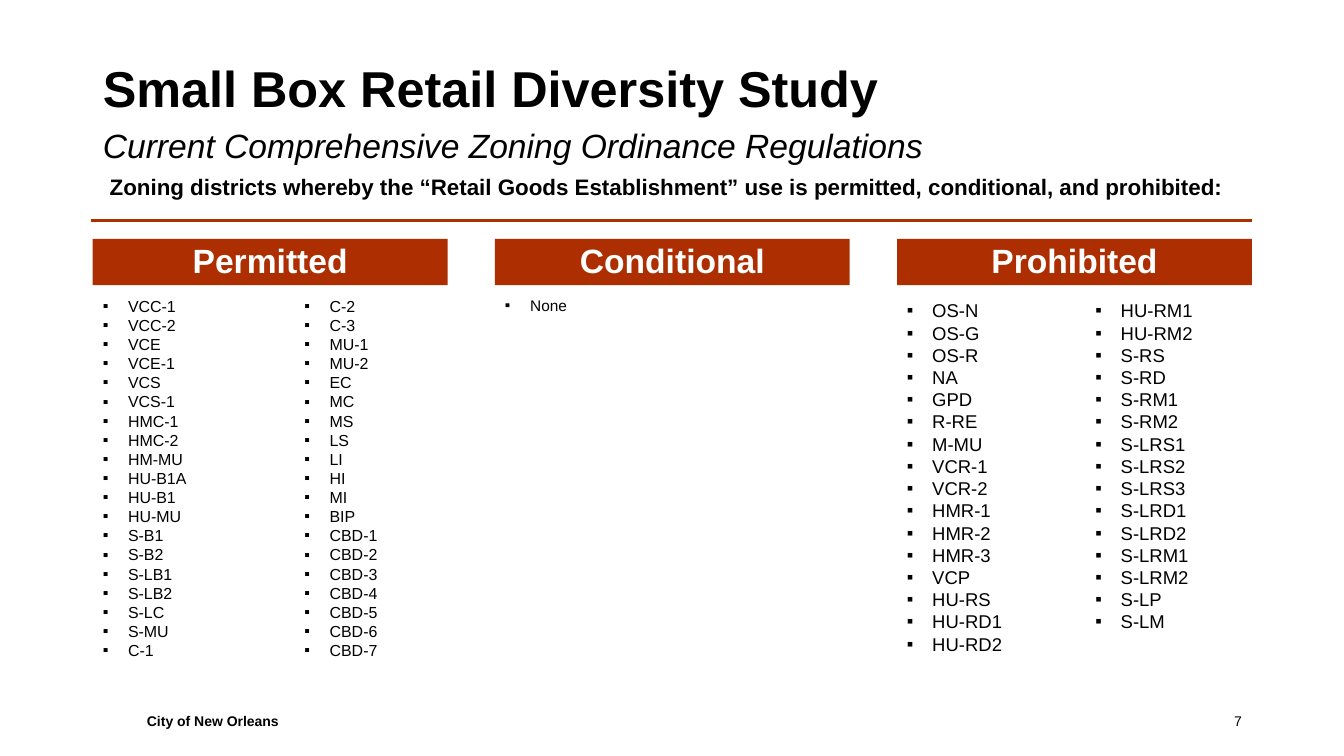
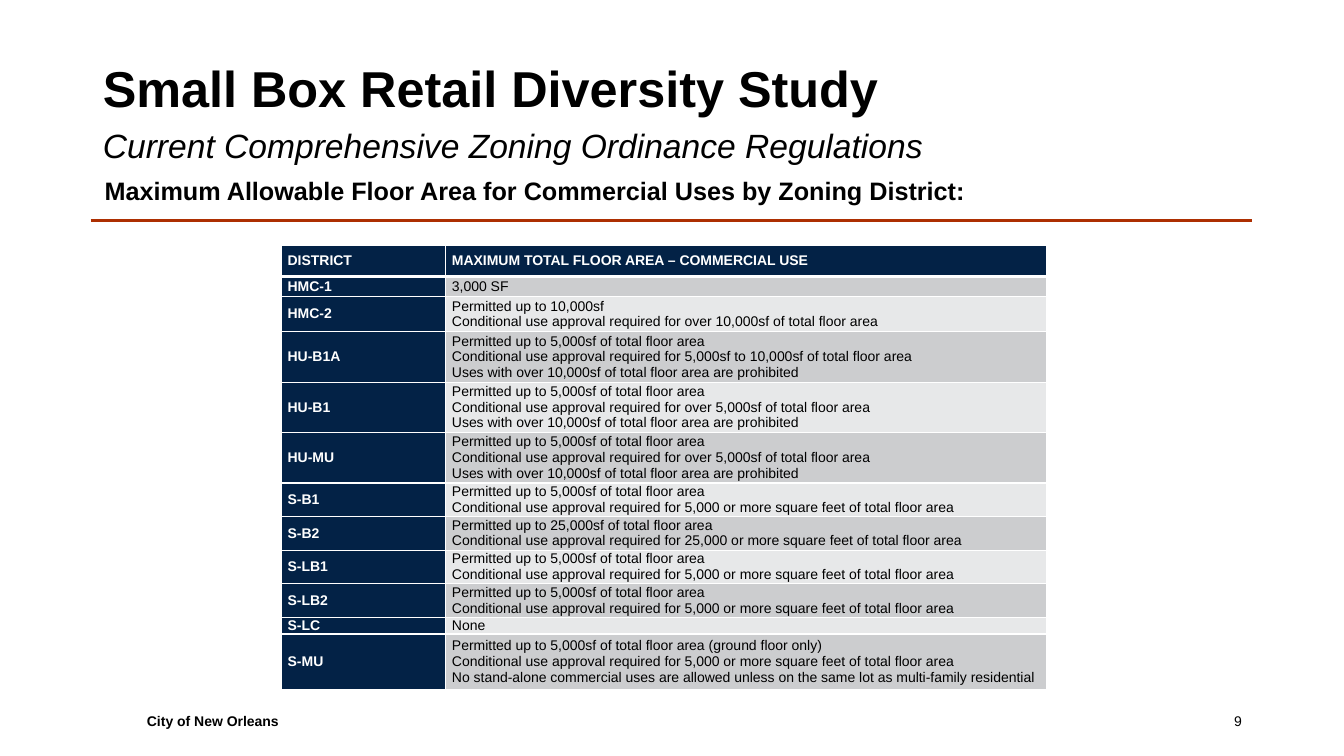
from lxml import etree
from pptx import Presentation
from pptx import util as u
from pptx.dml.color import RGBColor
from pptx.enum import shapes, text
from pptx.oxml.ns import qn

COLORS = {"rust": "AD2F01", "navy": "032246", "black": "000000", "white": "FFFFFF",
          "dark band": "CCCDCF", "light band": "E7E8E9"}
FONT = "Arial"
LEFT, WIDTH = 66.24, 828
COLUMN_WIDTH, COLUMN_STEP = 253.44, 287.28
INDENT = 18


def place(shape, left, top, width, height):
    shape.left, shape.top = u.Pt(left), u.Pt(top)
    shape.width, shape.height = u.Pt(width), u.Pt(height)
    return shape


def write(frame, lines, size, color="black", bold=False, italic=False, align="LEFT",
          anchor="TOP", spacing=1.0, bullet=None):
    frame.word_wrap = True
    frame.auto_size = text.MSO_AUTO_SIZE.NONE
    frame.vertical_anchor = text.MSO_ANCHOR[anchor]
    for index, line in enumerate(lines):
        paragraph = frame.add_paragraph() if index else frame.paragraphs[0]
        paragraph.alignment = text.PP_ALIGN[align]
        paragraph.line_spacing = spacing
        paragraph.space_before = paragraph.space_after = u.Pt(0)
        properties = paragraph._p.get_or_add_pPr()
        indent = u.Pt(INDENT) if bullet else 0
        properties.set("marL", str(indent))
        properties.set("indent", str(-indent))
        if bullet:
            etree.SubElement(properties, qn("a:buFont"), typeface=FONT)
            etree.SubElement(properties, qn("a:buChar"), char=bullet)
        else:
            etree.SubElement(properties, qn("a:buNone"))
        run = paragraph.add_run()
        run.text = line
        run.font.name, run.font.size = FONT, u.Pt(size)
        run.font.bold, run.font.italic = bold, italic
        run.font.color.rgb = RGBColor.from_string(COLORS[color])


presentation = Presentation()
presentation.slide_width, presentation.slide_height = u.Pt(960), u.Pt(540)
comparison, title_content = presentation.slide_layouts[4], presentation.slide_layouts[1]

# Shared frame: title, subtitle, caption, rule and footer
pages = [
    (comparison, "7", "Zoning districts whereby the “Retail Goods Establishment” use is "
     "permitted, conditional, and prohibited:", 16, 71.28, 120.24),
    (title_content, "9", "Maximum Allowable Floor Area for Commercial Uses by Zoning District:",
     18, 67.68, 121.68),
]
for layout, number, caption, caption_size, caption_left, caption_top in pages:
    slide = presentation.slides.add_slide(layout)
    title = place(slide.shapes.title, LEFT, 28.8, WIDTH, 67.68)
    write(title.text_frame, ["Small Box Retail Diversity Study"], 36, bold=True, anchor="MIDDLE")
    subtitle = place(slide.placeholders[1], LEFT, 85.68, WIDTH, 64.8)
    write(subtitle.text_frame, ["Current Comprehensive Zoning Ordinance Regulations"], 24,
          italic=True)

    rule = slide.shapes.add_connector(shapes.MSO_CONNECTOR.STRAIGHT, u.Pt(64.8), u.Pt(157.5),
                                      u.Pt(894.24), u.Pt(157.5))
    rule.line.color.rgb = RGBColor.from_string(COLORS["rust"])
    rule.line.width = u.Pt(2.75)
    etree.SubElement(rule._element.spPr, qn("a:effectLst"))

    labels = [
        (caption, caption_size, True, "LEFT", "TOP", (caption_left, caption_top, 839.52, 28)),
        ("City of New Orleans", 10, True, "LEFT", "MIDDLE", (97.92, 500.4, 544.32, 28.8)),
        (number, 10, False, "RIGHT", "MIDDLE", (678.24, 500.4, 216, 28.8)),
    ]
    for label, size, bold, align, anchor, box in labels:
        text_box = slide.shapes.add_textbox(*map(u.Pt, box))
        write(text_box.text_frame, [label], size, bold=bold, align=align, anchor=anchor)

districts_slide, floor_area_slide = presentation.slides

# Zoning districts: column headings
for index, heading in enumerate(["Permitted", "Conditional", "Prohibited"]):
    band = districts_slide.shapes.add_shape(
        shapes.MSO_SHAPE.RECTANGLE, u.Pt(LEFT + index * COLUMN_STEP), u.Pt(170.64),
        u.Pt(COLUMN_WIDTH), u.Pt(33.12))
    band.shadow.inherit = False
    band.fill.solid()
    band.fill.fore_color.rgb = RGBColor.from_string(COLORS["rust"])
    band.line.fill.background()
    write(band.text_frame, [heading], 24, "white", bold=True, align="CENTER", anchor="BOTTOM",
          spacing=0.9)

# Zoning districts: placeholder number (or None for a text box), left, top, width, size, pitch
district_lists = [
    (2, LEFT, 208.08, 135.36, 11.4, 13.65,
     "VCC-1 VCC-2 VCE VCE-1 VCS VCS-1 HMC-1 HMC-2 HM-MU HU-B1A HU-B1 HU-MU "
     "S-B1 S-B2 S-LB1 S-LB2 S-LC S-MU C-1"),
    (3, 210.24, 208.08, 126, 11.4, 13.65,
     "C-2 C-3 MU-1 MU-2 EC MC MS LS LI HI MI BIP "
     "CBD-1 CBD-2 CBD-3 CBD-4 CBD-5 CBD-6 CBD-7"),
    (4, LEFT + COLUMN_STEP, 208.08, COLUMN_WIDTH, 11, 13.2, "None"),
    (None, LEFT + 2 * COLUMN_STEP, 210.24, 125.28, 13.2, 15.86,
     "OS-N OS-G OS-R NA GPD R-RE M-MU VCR-1 VCR-2 HMR-1 HMR-2 HMR-3 VCP HU-RS HU-RD1 HU-RD2"),
    (None, 775.44, 210.24, 125.28, 13.2, 15.86,
     "HU-RM1 HU-RM2 S-RS S-RD S-RM1 S-RM2 S-LRS1 S-LRS2 S-LRS3 S-LRD1 S-LRD2 "
     "S-LRM1 S-LRM2 S-LP S-LM"),
]
for number, left, top, width, size, pitch, districts in district_lists:
    if number:
        district_list = districts_slide.placeholders[number]
    else:
        district_list = districts_slide.shapes.add_textbox(0, 0, 0, 0)
    place(district_list, left, top, width, 278)
    write(district_list.text_frame, districts.split(), size, spacing=u.Pt(pitch), bullet="▪")

# Floor area table: district, row height, rules
UP_TO_5000 = "Permitted up to 5,000sf of total floor area"
OVER_5000 = "Conditional use approval required for over 5,000sf of total floor area"
OR_MORE = "Conditional use approval required for 5,000 or more square feet of total floor area"
PROHIBITED = "Uses with over 10,000sf of total floor area are prohibited"
floor_areas = [
    ("DISTRICT", 22.4, ["MAXIMUM TOTAL FLOOR AREA – COMMERCIAL USE"]),
    ("HMC-1", 14.4, ["3,000 SF"]),
    ("HMC-2", 25.2, ["Permitted up to 10,000sf",
                     "Conditional use approval required for over 10,000sf of total floor area"]),
    ("HU-B1A", 36, [UP_TO_5000, "Conditional use approval required for 5,000sf to 10,000sf "
                    "of total floor area", PROHIBITED]),
    ("HU-B1", 36, [UP_TO_5000, OVER_5000, PROHIBITED]),
    ("HU-MU", 36, [UP_TO_5000, OVER_5000, PROHIBITED]),
    ("S-B1", 24, [UP_TO_5000, OR_MORE]),
    ("S-B2", 24, [UP_TO_5000.replace("5,000", "25,000"), OR_MORE.replace("5,000", "25,000")]),
    ("S-LB1", 24, [UP_TO_5000, OR_MORE]),
    ("S-LB2", 24, [UP_TO_5000, OR_MORE]),
    ("S-LC", 12, ["None"]),
    ("S-MU", 39.6, [UP_TO_5000 + " (ground floor only)", OR_MORE,
                    "No stand-alone commercial uses are allowed unless on the same lot as "
                    "multi-family residential"]),
]
table = floor_area_slide.shapes.add_table(
    len(floor_areas), 2, u.Pt(201), u.Pt(175), u.Pt(546.48),
    u.Pt(sum(height for _, height, _ in floor_areas))).table
table.horz_banding = False
table.columns[0].width, table.columns[1].width = u.Pt(117.36), u.Pt(429.12)

for row, (district, height, rules) in enumerate(floor_areas):
    table.rows[row].height = u.Pt(height)
    for column, lines in enumerate([[district], rules]):
        cell = table.cell(row, column)
        heading = row == 0 or column == 0
        fill = "navy" if heading else "dark band" if row % 2 else "light band"
        cell.fill.solid()
        cell.fill.fore_color.rgb = RGBColor.from_string(COLORS[fill])
        cell.margin_left = cell.margin_right = u.Pt(4.5)
        cell.margin_top = cell.margin_bottom = 0
        cell.vertical_anchor = text.MSO_ANCHOR.MIDDLE
        write(cell.text_frame, lines, 10, "white" if heading else "black", bold=heading)

        # White cell borders, heavier around the heading row's lower edge
        for position, side in enumerate(["lnL", "lnR", "lnT", "lnB"]):
            heavy = (row, side) in [(0, "lnB"), (1, "lnT")]
            border = etree.Element(qn("a:" + side), w=str(u.Pt(3 if heavy else 1)))
            border_fill = etree.SubElement(border, qn("a:solidFill"))
            etree.SubElement(border_fill, qn("a:srgbClr"), val=COLORS["white"])
            cell._tc.get_or_add_tcPr().insert(position, border)

presentation.save("out.pptx")
